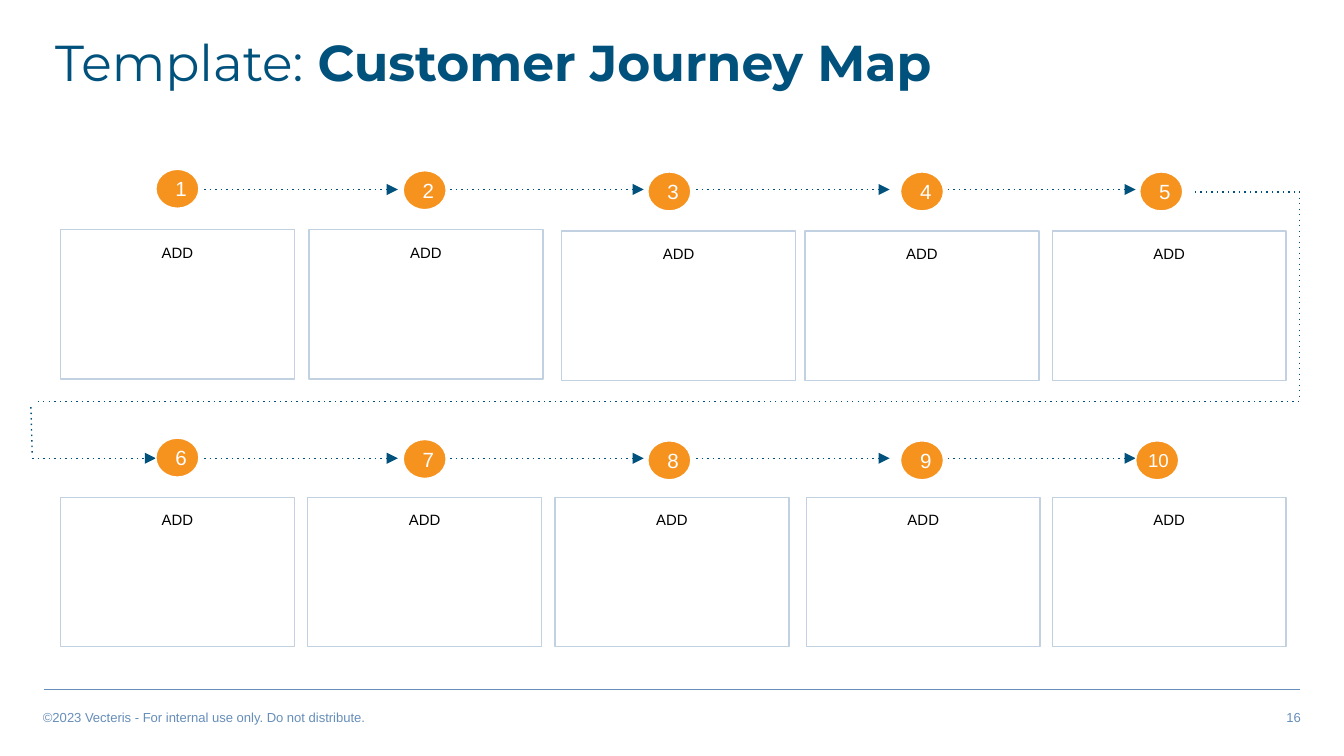
"""Build a ten-step customer journey map template slide."""
import pptx
import pptx.dml.color
import pptx.enum.shapes
import pptx.enum.text
import pptx.oxml.ns
import pptx.util
from lxml import etree

Inches, Pt = pptx.util.Inches, pptx.util.Pt
RGB = pptx.dml.color.RGBColor.from_string
SHAPES = pptx.enum.shapes.MSO_SHAPE
ALIGN = pptx.enum.text.PP_ALIGN
ANCHOR = pptx.enum.text.MSO_ANCHOR
qn = pptx.oxml.ns.qn

COLORS = {
    "navy": "00517C",
    "orange": "F6921E",
    "frame": "C1D1E2",
    "footer": "668EB9",
    "white": "FFFFFF",
    "black": "000000",
}


def write(holder, runs, size, color, font="Arial", align=ALIGN.LEFT, anchor=ANCHOR.TOP, insets=(0.1, 0.1)):
    """Fill a shape's text frame with (text, bold) runs in one paragraph."""
    frame = holder.text_frame
    side, end = map(Inches, insets)
    settings = {
        "margin_left": side, "margin_right": side, "margin_top": end, "margin_bottom": end,
        "word_wrap": True, "vertical_anchor": anchor, "auto_size": pptx.enum.text.MSO_AUTO_SIZE.NONE,
    }
    for name, value in settings.items():
        setattr(frame, name, value)
    paragraph = frame.paragraphs[0]
    paragraph.alignment = align
    for text, bold in runs:
        run = paragraph.add_run()
        run.text = text
        for name, value in {"name": font, "size": Pt(size), "bold": bold}.items():
            setattr(run.font, name, value)
        run.font.color.rgb = RGB(COLORS[color])
    return paragraph


def connect(start, end, color="navy", width=0.75, dotted=True, arrow=False):
    """Draw a straight line, dotted and arrow-tipped on request."""
    line = slide.shapes.add_connector(
        pptx.enum.shapes.MSO_CONNECTOR.STRAIGHT, *map(Inches, start + end))
    line.line.color.rgb = RGB(COLORS[color])
    line.line.width = Pt(width)
    outline = line.line._get_or_add_ln()
    if dotted:
        etree.SubElement(outline, qn("a:prstDash"), val="dot")
    if arrow:
        etree.SubElement(outline, qn("a:tailEnd"), type="triangle")
    etree.SubElement(line._element.spPr, qn("a:effectLst"))


deck = pptx.Presentation()
deck.slide_width = Inches(10)
deck.slide_height = deck.slide_width * 9 // 16
slide = deck.slides.add_slide(deck.slide_layouts[5])

title = slide.shapes.title
for name, value in {"left": 0.34, "top": 0.24, "width": 6.97, "height": 0.57}.items():
    setattr(title, name, Inches(value))
heading = write(title, [("Template:", False), (" Customer Journey Map", True)], 27, "navy",
                font="Montserrat", insets=(0.07, 0.04))
heading.line_spacing = 0.9

connect((0.33, 5.13), (9.67, 5.13), color="footer", width=1, dotted=False)
footers = [
    (0.25, "©2023 Vecteris - For internal use only. Do not distribute.", ALIGN.LEFT),
    (5.75, "16", ALIGN.RIGHT),
]
for left, text, align in footers:
    footer = slide.shapes.add_textbox(Inches(left), Inches(5.24), Inches(4), Inches(0.19))
    write(footer, [(text, False)], 7, "footer", align=align, insets=(0.07, 0.04))

turn_path = [
    ((8.89, 1.43), (9.67, 1.43)),
    ((9.67, 1.47), (9.67, 2.95)),
    ((0.28, 2.99), (9.67, 2.99)),
    ((0.23, 3.03), (0.24, 3.38)),
]
for start, end in turn_path:
    connect(start, end)
connect((0.24, 3.41), (1.16, 3.41), arrow=True)

journey_rows = [
    {"first": 1, "shift": 0, "steps": [1.16, 3, 4.82, 6.7, 8.48],
     "cards": [0.45, 2.3, 4.18, 5.99, 7.83], "card_tops": [1.71, 1.71, 1.72, 1.72, 1.72]},
    {"first": 6, "shift": 2, "steps": [1.16, 3, 4.82, 6.7, 8.45],
     "cards": [0.45, 2.29, 4.13, 6, 7.83], "card_tops": [3.7] * 5},
]
step_tops = [1.26, 1.27, 1.28, 1.28, 1.28]

for row in journey_rows:
    for index in range(4):
        start = 1.52 + 1.83 * index
        level = 1.41 + row["shift"]
        connect((start, level), (start + 1.44, level), arrow=True)

    for left, top in zip(row["cards"], row["card_tops"]):
        card = slide.shapes.add_shape(
            SHAPES.RECTANGLE, Inches(left), Inches(top), Inches(1.74), Inches(1.11))
        card.shadow.inherit = False
        card.fill.background()
        card.line.color.rgb = RGB(COLORS["frame"])
        card.line.width = Pt(0.75)
        write(card, [("ADD", False)], 8, "black", align=ALIGN.CENTER)

    for number, (left, top) in enumerate(zip(row["steps"], step_tops), row["first"]):
        step = slide.shapes.add_shape(
            SHAPES.OVAL, Inches(left), Inches(top + row["shift"]), Inches(0.32), Inches(0.29))
        step.shadow.inherit = False
        step.fill.solid()
        step.fill.fore_color.rgb = RGB(COLORS["orange"])
        step.line.color.rgb = RGB(COLORS["white"])
        step.line.width = Pt(0.75)
        if number < 10:
            write(step, [(str(number), False)], 11, "white", anchor=ANCHOR.MIDDLE)

last_number = slide.shapes.add_textbox(Inches(8.42), Inches(3.24), Inches(0.4), Inches(0.37))
write(last_number, [("10", False)], 10, "white", align=ALIGN.CENTER)

deck.save("out.pptx")
